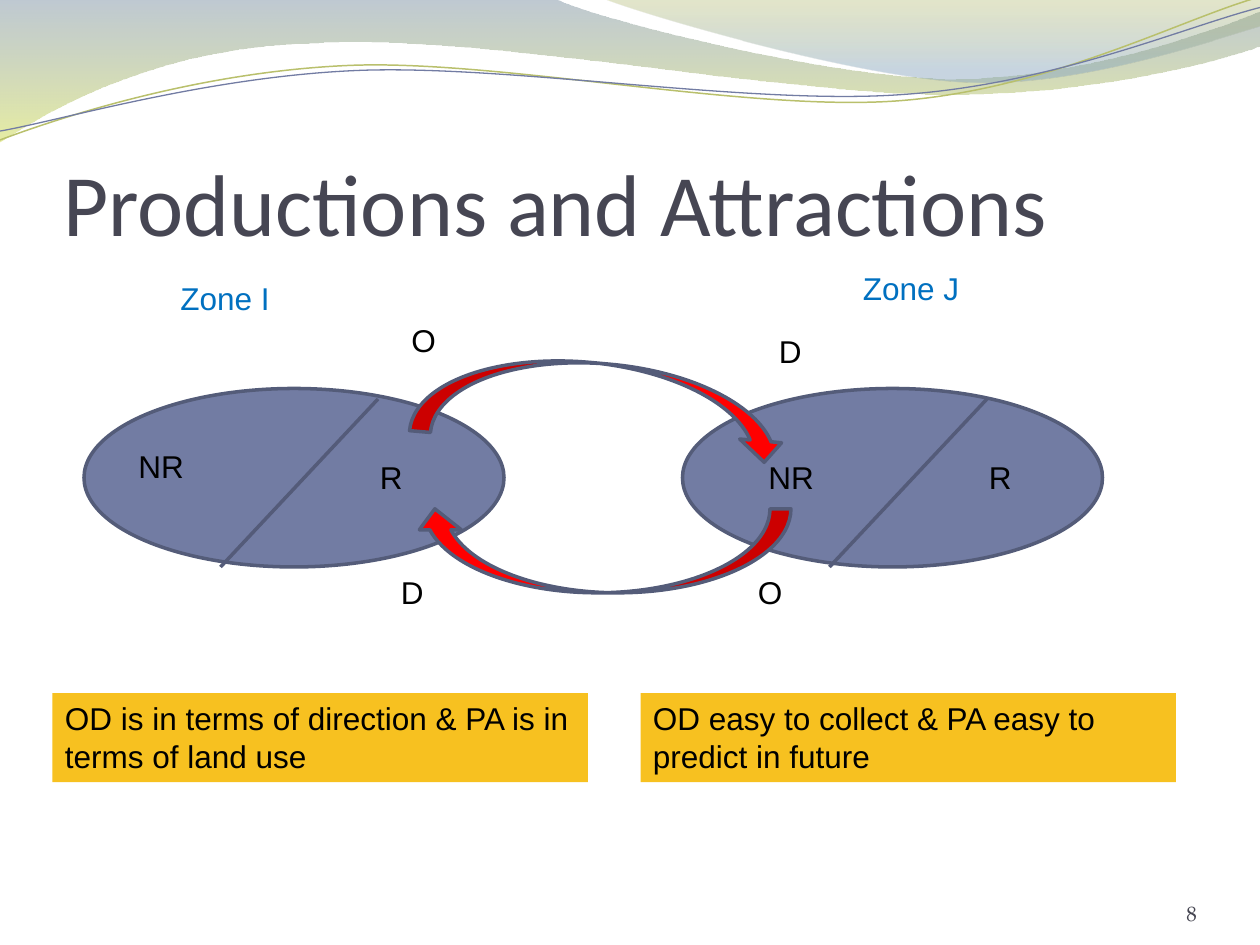
from dataclasses import dataclass
from math import cos, radians, sin

from lxml import etree
from pptx import Presentation
from pptx.dml.color import RGBColor as RGB
from pptx.enum.shapes import MSO_CONNECTOR as CONNECTOR, MSO_SHAPE as SHAPE
from pptx.enum.text import MSO_ANCHOR as ANCHOR, MSO_AUTO_SIZE as AUTO_SIZE, PP_ALIGN as ALIGN
from pptx.oxml.ns import qn
from pptx.util import Pt


@dataclass(frozen=True)
class Theme:
    title: RGB = RGB.from_string("464653")
    number: RGB = RGB.from_string("43434F")
    text: RGB = RGB.from_string("000000")
    zone_name: RGB = RGB.from_string("0070C0")
    zone: RGB = RGB.from_string("727CA3")
    outline: RGB = RGB.from_string("545C79")
    divider: RGB = RGB.from_string("545B79")
    arrow: RGB = RGB.from_string("FF0000")
    note: RGB = RGB.from_string("F7C120")
    green_line: RGB = RGB.from_string("B9C06C")
    title_size: int = 50
    text_size: int = 18
    number_size: int = 12


theme = Theme()

presentation = Presentation()
presentation.slide_width, presentation.slide_height = Pt(720), Pt(540)
slide = presentation.slides.add_slide(presentation.slide_layouts[5])
shapes = slide.shapes


def add_curve(start, steps, close, center=(0, 0), tilt=0):
    """Draw (x, y) lines and six-number Bezier steps, in a box tilted about center."""
    cx, cy = center
    c, s = cos(radians(tilt)), sin(radians(tilt))
    points = [start] + [step[i:i + 2] for step in steps for i in range(0, len(step), 2)]
    points = [(Pt(cx + (x - cx) * c + (y - cy) * s), Pt(cy - (x - cx) * s + (y - cy) * c))
              for x, y in points]
    builder = shapes.build_freeform(*points[0])
    builder.add_line_segments(points[1:], close=close)
    shape = builder.convert_to_shape()
    shape.shadow.inherit = False
    shape.rotation = tilt

    # Join each three segments of a Bezier step into one curve
    segments = iter(list(shape._element.iter(qn("a:lnTo"))))
    for step in steps:
        segment = next(segments)
        if len(step) == 6:
            segment.tag = qn("a:cubicBezTo")
            for _ in range(2):
                extra = next(segments)
                segment.append(extra[0])
                extra.getparent().remove(extra)
    return shape


def write(shape, text, size, color, font="Arial", align=ALIGN.LEFT, anchor=ANCHOR.TOP):
    frame = shape.text_frame
    frame.word_wrap = True
    frame.auto_size = AUTO_SIZE.NONE
    frame.vertical_anchor = anchor
    frame.text = text
    paragraph = frame.paragraphs[0]
    paragraph.alignment = align
    run_font = paragraph.runs[0].font
    run_font.name, run_font.size = font, Pt(size)
    run_font.color.rgb = color
    return frame


# Header waves: start, steps, then (position, colour, opacity in %) stops
waves = [
    ((0, 0), [(317, -0.7), (343, 12, 478, 45, 546, 45), (614, 45, 690, 19, 720, 6.5),
              (720.7, 26), (708, 32, 626, 55, 537, 54), (448, 54, 275, 20, 185, 24.5),
              (93, 26, 33, 60, -0.7, 81.4)],
     [(0, "72889B", 45), (1, "D3DE57", 55)]),
    ((345, -0.7), [(366, 8, 491, 45, 554, 47), (616, 49.7, 692, 23, 720, 15), (720, 0)],
     [(0, "A4AC50", 30), (0.8, "84A3BD", 45)]),
]
for start, steps, stops in waves:
    wave = add_curve(start, steps, True)
    wave.line.fill.background()
    wave.fill.gradient()
    wave.fill.gradient_angle = 270
    for stop, (position, color, _) in zip(wave.fill.gradient_stops, stops):
        stop.position = position
        stop.color.rgb = RGB.from_string(color)
    gradient = wave._element.spPr.find(qn("a:gradFill"))
    for node, (_, _, opacity) in zip(gradient.iter(qn("a:srgbClr")), stops):
        etree.SubElement(node, qn("a:alpha")).set("val", str(opacity * 1000))

# Thin header lines
header_lines = [
    ((0, 80), [(34.6, 67, 113.8, 41, 199.4, 37.4), (284.4, 33.8, 427, 64.1, 513.4, 57.6),
               (599.8, 51.1, 675.4, 10.8, 718.6, -1.4)],
     (359.3, 41.4), theme.green_line, 0.85),
    ((0, 74.9), [(33.8, 69.1, 118.1, 43.9, 203.8, 40.3), (290.2, 36.7, 429.8, 60.5, 516.2, 54),
                 (601.9, 48.2, 677.5, 15.1, 720, 4.3)],
     (359.6, 42.5), theme.zone, 0.75),
]
for start, steps, center, color, width in header_lines:
    curve = add_curve(start, steps, False, center, 357.3)
    curve.fill.background()
    curve.line.color.rgb = color
    curve.line.width = Pt(width)

# Title, brought in front of the header
title = shapes.title
title.left, title.top, title.width, title.height = Pt(36), Pt(55.4), Pt(648), Pt(90)
frame = write(title, "Productions and Attractions", theme.title_size, theme.title,
              font="Calibri", anchor=ANCHOR.BOTTOM)
frame.margin_left = frame.margin_right = frame.margin_bottom = 0
frame.margin_top = Pt(3.6)
shapes._spTree.append(title._element)

# Zones, then their dividers, then the trip arrows
outlined = [shapes.add_shape(SHAPE.OVAL, Pt(left), Pt(222), Pt(240), Pt(102))
            for left in (48, 390)]
for zone in outlined:
    zone.fill.solid()
    zone.fill.fore_color.rgb = theme.zone

for right in (216, 564):
    divider = shapes.add_connector(CONNECTOR.STRAIGHT, Pt(right), Pt(228), Pt(right - 90), Pt(324))
    divider.line.color.rgb = theme.divider
    divider.line.width = Pt(2)
    etree.SubElement(divider._element.spPr, qn("a:effectLst"))

# Labels between the zones and the arrows, then those on top
labels = [
    ("R", 210, 258, 42, theme.text),
    ("NR", 72, 252, 42, theme.text),
    ("R", 558, 258, 42, theme.text),
    ("NR", 432, 258, 42, theme.text),
    ("Zone I", 96, 156, 72, theme.zone_name),
    ("Zone J", 486, 150, 78, theme.zone_name),
    ("O", 228, 180, 36, theme.text),
    ("O", 426, 324, 36, theme.text),
    ("D", 222, 324, 36, theme.text),
    ("D", 438, 186, 36, theme.text),
]
for i, (text, left, top, width, color) in enumerate(labels):
    if i == 4:
        for arrow_left, arrow_top, rotation in [(319.5, 124, 275.1), (320.2, 207, 90)]:
            arrow = shapes.add_shape(SHAPE.CURVED_LEFT_ARROW, Pt(arrow_left), Pt(arrow_top),
                                     Pt(48), Pt(215.5))
            arrow.rotation = rotation
            arrow.fill.solid()
            arrow.fill.fore_color.rgb = theme.arrow
            outlined.append(arrow)
    label = shapes.add_textbox(Pt(left), Pt(top), Pt(width), Pt(29))
    write(label, text, theme.text_size, color)

for shape in outlined:
    shape.shadow.inherit = False
    shape.line.color.rgb = theme.outline
    shape.line.width = Pt(2)

# Notes
notes = ["OD is in terms of direction & PA is in terms of land use",
         "OD easy to collect & PA easy to predict in future"]
for i, text in enumerate(notes):
    note = shapes.add_shape(SHAPE.RECTANGLE, Pt(30 + 336 * i), Pt(396), Pt(306), Pt(51))
    note.shadow.inherit = False
    note.fill.solid()
    note.fill.fore_color.rgb = theme.note
    note.line.fill.background()
    write(note, text, theme.text_size, theme.text)

# Slide number
number = shapes.add_textbox(Pt(624), Pt(500.4), Pt(60), Pt(28.8))
frame = write(number, "8", theme.number_size, theme.number, font="TeX Gyre Pagella",
              align=ALIGN.RIGHT, anchor=ANCHOR.BOTTOM)
frame.margin_left = frame.margin_right = frame.margin_top = frame.margin_bottom = 0

presentation.save("out.pptx")
